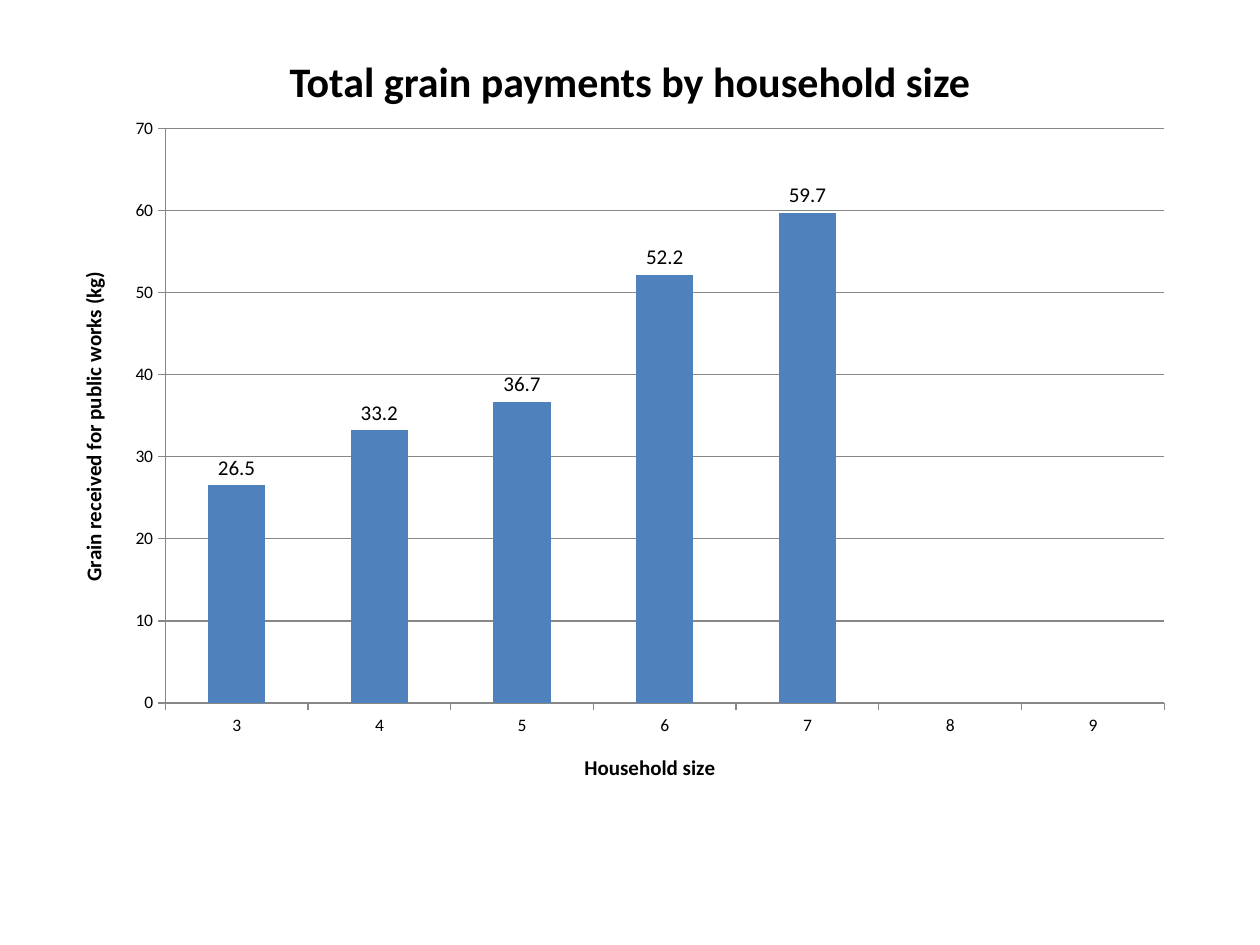
from dataclasses import dataclass

from pptx import Presentation
from pptx.chart.data import CategoryChartData
from pptx.dml.color import RGBColor
from pptx.enum.chart import XL_CHART_TYPE as ChartType
from pptx.enum.chart import XL_LABEL_POSITION as LabelPosition
from pptx.enum.chart import XL_TICK_MARK as TickMark
from pptx.enum.text import MSO_ANCHOR, PP_ALIGN
from pptx.util import Inches, Pt

# Content
TITLE = "Total grain payments by household size"
CATEGORY_TITLE = "Household size"
VALUE_TITLE = "Grain received for public works (kg)"
GRAIN_BY_SIZE = {
    "3": 26.5, "4": 33.2, "5": 36.7, "6": 52.2, "7": 59.7, "8": None, "9": None,
}


@dataclass(frozen=True)
class Theme:
    font: str = "Calibri"
    text: RGBColor = RGBColor(0, 0, 0)
    bar: RGBColor = RGBColor(0x4F, 0x81, 0xBD)
    line: RGBColor = RGBColor(0x87, 0x87, 0x87)
    title_size: int = 24
    label_size: int = 12
    axis_size: int = 10


THEME = Theme()

# Left, top, width, height in inches
TITLE_BOX = (0.5, 0.29, 9, 0.7)
CHART_BOX = (0.42, 0.83, 9, 5.58)


def style_font(font, size, bold=False):
    font.name = THEME.font
    font.size = Pt(size)
    font.bold = bold
    font.color.rgb = THEME.text


def add_run(paragraph, text, size):
    run = paragraph.add_run()
    run.text = text
    style_font(run.font, size, bold=True)


def style_line(line):
    line.color.rgb = THEME.line
    line.width = Pt(0.75)


def style_axis(axis, title):
    axis.major_tick_mark = TickMark.OUTSIDE
    axis.minor_tick_mark = TickMark.NONE
    style_font(axis.tick_labels.font, THEME.axis_size)
    style_line(axis.format.line)
    add_run(axis.axis_title.text_frame.paragraphs[0], title, THEME.label_size)


def add_title(slide):
    shape = slide.shapes.title
    shape.left, shape.top, shape.width, shape.height = map(Inches, TITLE_BOX)
    frame = shape.text_frame
    frame.vertical_anchor = MSO_ANCHOR.MIDDLE
    paragraph = frame.paragraphs[0]
    paragraph.alignment = PP_ALIGN.CENTER
    add_run(paragraph, TITLE, THEME.title_size)


def add_grain_chart(slide):
    data = CategoryChartData(number_format="0.0")
    data.categories = list(GRAIN_BY_SIZE)
    data.add_series("Series 1", list(GRAIN_BY_SIZE.values()))
    chart = slide.shapes.add_chart(
        ChartType.COLUMN_CLUSTERED, *map(Inches, CHART_BOX), data
    ).chart
    chart.has_title = False
    chart.has_legend = False
    style_font(chart.font, THEME.axis_size)

    # Axes and gridlines
    style_axis(chart.category_axis, CATEGORY_TITLE)
    value_axis = chart.value_axis
    style_axis(value_axis, VALUE_TITLE)
    value_axis.minimum_scale, value_axis.maximum_scale = 0, 70
    value_axis.major_unit = 10
    value_axis.tick_labels.number_format = "0"
    value_axis.tick_labels.number_format_is_linked = False
    value_axis.has_major_gridlines = True
    style_line(value_axis.major_gridlines.format.line)

    # Bars and their values
    plot = chart.plots[0]
    plot.vary_by_categories = False
    plot.gap_width = 150
    series = plot.series[0]
    series.format.fill.solid()
    series.format.fill.fore_color.rgb = THEME.bar
    labels = series.data_labels
    labels.show_value = True
    labels.position = LabelPosition.OUTSIDE_END
    style_font(labels.font, THEME.label_size)


def main():
    presentation = Presentation()
    presentation.slide_width = Inches(10)
    presentation.slide_height = Inches(7.5)
    title_only = presentation.slide_layouts[5]
    slide = presentation.slides.add_slide(title_only)
    add_title(slide)
    add_grain_chart(slide)
    presentation.save("out.pptx")


if __name__ == "__main__":
    main()
